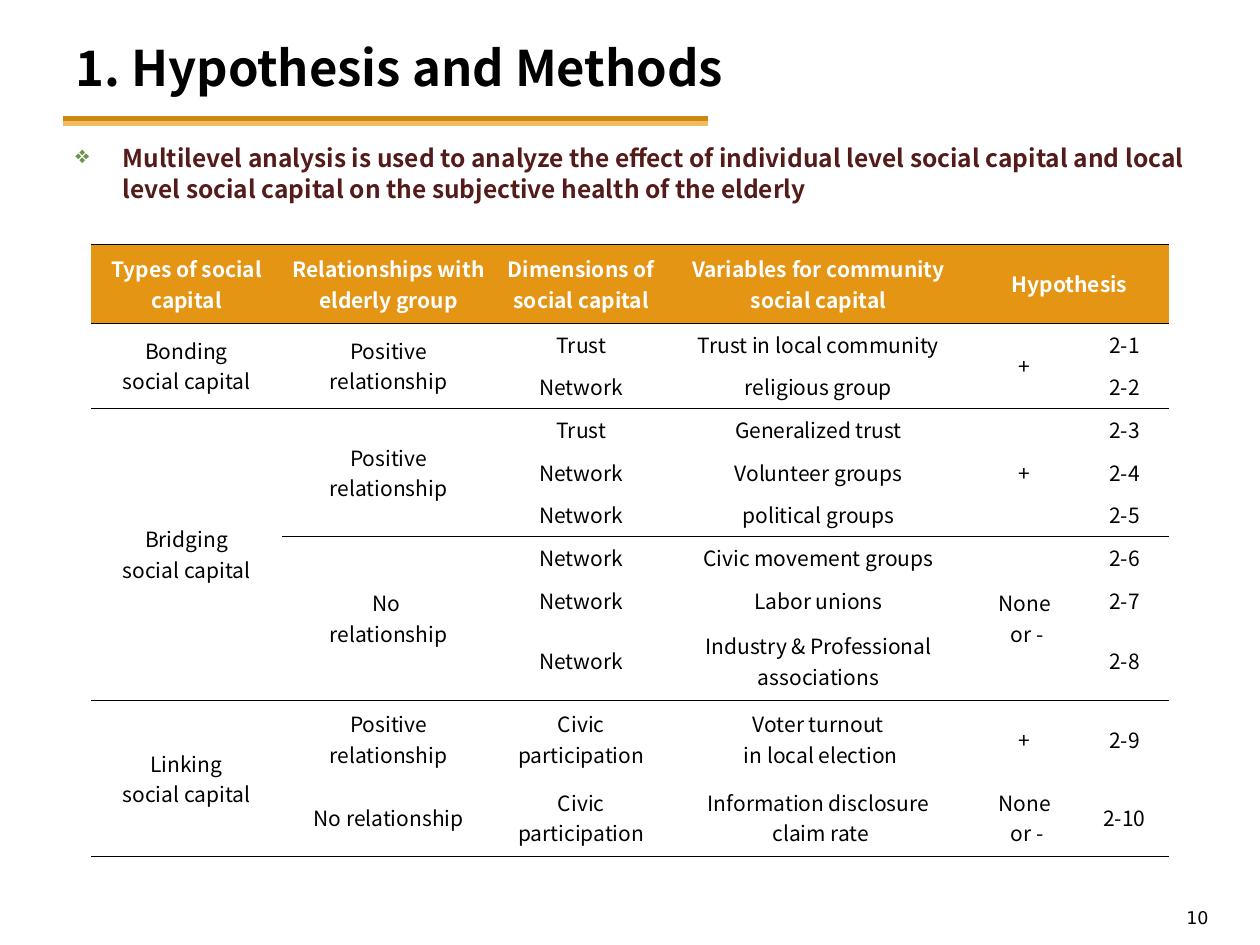
from copy import deepcopy

from lxml import etree
from pptx import Presentation
from pptx.dml.color import RGBColor
from pptx.enum.shapes import MSO_CONNECTOR
from pptx.enum.text import MSO_ANCHOR, PP_ALIGN
from pptx.oxml.ns import qn
from pptx.util import Pt

LEFT, CENTER, RIGHT = PP_ALIGN.LEFT, PP_ALIGN.CENTER, PP_ALIGN.RIGHT
TOP, MIDDLE = MSO_ANCHOR.TOP, MSO_ANCHOR.MIDDLE
STRAIGHT = MSO_CONNECTOR.STRAIGHT

MAIN_FONT, NUMBER_FONT = "Noto Sans CJK KR", "DejaVu Sans"
COLORS = {
    "black": "000000", "white": "FFFFFF", "header": "E49514", "body": "541B1B",
    "bullet": "6E9349", "dark rule": "CF8711", "light rule": "F2BB60",
}

TITLE = "1. Hypothesis and Methods"
BODY = ("Multilevel analysis is used to analyze the effect of individual level social "
        "capital and local level social capital on the subjective health of the elderly")
PAGE_NUMBER = "10"
TITLE_RULES = [(67.7, "dark rule"), (70.6, "light rule")]

# None marks a cell covered by the merged cell above or to the left of it.
ROWS = [
    ["Types of social capital", "Relationships with elderly group",
     "Dimensions of social capital", "Variables for community social capital",
     "Hypothesis", None],
    ["Bonding\nsocial capital", "Positive relationship", "Trust",
     "Trust in local community", "+", "2-1"],
    [None, None, "Network", "religious group", None, "2-2"],
    ["Bridging\nsocial capital", "Positive relationship", "Trust",
     "Generalized trust", "+", "2-3"],
    [None, None, "Network", "Volunteer groups", None, "2-4"],
    [None, None, "Network", "political groups", None, "2-5"],
    [None, "No \nrelationship", "Network", "Civic movement groups", "None\n or -", "2-6"],
    [None, None, "Network", "Labor unions", None, "2-7"],
    [None, None, "Network", "Industry & Professional associations", None, "2-8"],
    ["Linking\nsocial capital", "Positive relationship", "Civic participation",
     "Voter turnout\n in local election", "+", "2-9"],
    [None, "No relationship", "Civic participation",
     "Information disclosure\n claim rate", "None\n or -", "2-10"],
]
TABLE_LEFT, TABLE_TOP = 52, 139.7
COLUMN_WIDTHS = [109.2, 121.8, 98.4, 172.8, 62.8, 51.2]
TALL_ROW, SHORT_ROW = 44.8, 24.4
TALL_ROWS = {0, 8, 9, 10}
RULED_EDGES = {0, 1, 3, 6, 9, 11}  # row edges drawn in black


def rgb(name):
    return RGBColor.from_string(COLORS[name])


def write_text(frame, text, *, size, color="black", font=MAIN_FONT, bold=False,
               align=LEFT, anchor=TOP, after=0, before=0, spacing=1.0):
    frame.word_wrap = True
    frame.vertical_anchor = anchor
    paragraph = frame.paragraphs[0]
    paragraph.text = text
    paragraph.alignment = align
    paragraph.line_spacing = spacing
    paragraph.space_before, paragraph.space_after = Pt(before), Pt(after)
    for run in paragraph.runs:
        run.font.name, run.font.size, run.font.bold = font, Pt(size), bold
        run.font.color.rgb = rgb(color)
    for line_break in paragraph._p.findall(qn("a:br")):
        line_break.append(deepcopy(paragraph.runs[0]._r.rPr))
    return paragraph


def add_text_box(slide, left, top, width, height, text, **text_format):
    box = slide.shapes.add_textbox(Pt(left), Pt(top), Pt(width), Pt(height))
    return write_text(box.text_frame, text, **text_format)


def add_bullet(paragraph, character, color, indent):
    properties = paragraph._p.get_or_add_pPr()
    properties.set("marL", str(Pt(indent)))
    properties.set("indent", str(-Pt(indent)))
    bullet_color = etree.SubElement(properties, qn("a:buClr"))
    etree.SubElement(bullet_color, qn("a:srgbClr"), val=COLORS[color])
    etree.SubElement(properties, qn("a:buChar"), char=character)


def add_rule(slide, left, right, y, color, width):
    rule = slide.shapes.add_connector(STRAIGHT, Pt(left), Pt(y), Pt(right), Pt(y))
    rule.line.color.rgb = rgb(color)
    rule.line.width = Pt(width)
    etree.SubElement(rule._element.spPr, qn("a:effectLst"))


def set_borders(cell, top_ruled, bottom_ruled):
    """Draw black or white edges above and below; leave the sides open."""
    properties = cell._tc.get_or_add_tcPr()
    for side in ("a:lnL", "a:lnR"):
        etree.SubElement(etree.SubElement(properties, qn(side)), qn("a:noFill"))
    for side, ruled in (("a:lnT", top_ruled), ("a:lnB", bottom_ruled)):
        color, width = ("black", 0.28) if ruled else ("white", 0.5)
        line = etree.SubElement(properties, qn(side), w=str(Pt(width)))
        fill = etree.SubElement(line, qn("a:solidFill"))
        etree.SubElement(fill, qn("a:srgbClr"), val=COLORS[color])


def merge_cells(table):
    table.cell(0, 4).merge(table.cell(0, 5))
    for column in range(len(COLUMN_WIDTHS) - 1):
        start = 1
        for row in range(2, len(ROWS) + 1):
            if row == len(ROWS) or ROWS[row][column] is not None:
                if row - start > 1:
                    table.cell(start, column).merge(table.cell(row - 1, column))
                start = row


def add_hypothesis_table(slide):
    heights = [TALL_ROW if row in TALL_ROWS else SHORT_ROW for row in range(len(ROWS))]
    table = slide.shapes.add_table(
        len(ROWS), len(COLUMN_WIDTHS), Pt(TABLE_LEFT), Pt(TABLE_TOP),
        Pt(sum(COLUMN_WIDTHS)), Pt(sum(heights))).table
    table.first_row = table.horz_banding = False
    for column, width in zip(table.columns, COLUMN_WIDTHS):
        column.width = Pt(width)
    for row, height in zip(table.rows, heights):
        row.height = Pt(height)
    merge_cells(table)

    for row, texts in enumerate(ROWS):
        header = row == 0
        for column, text in enumerate(texts):
            cell = table.cell(row, column)
            edges = RULED_EDGES - {6} if column == 0 else RULED_EDGES
            span = cell.span_height if cell.is_merge_origin else 1
            set_borders(cell, row in edges, row + span in edges)
            if header:
                cell.fill.solid()
                cell.fill.fore_color.rgb = rgb("header")
            else:
                cell.fill.background()
            cell.margin_left = cell.margin_right = Pt(5.1)
            cell.margin_top = cell.margin_bottom = Pt(1.4)
            cell.vertical_anchor = MIDDLE
            if text is not None:
                write_text(cell.text_frame, text, size=12, bold=header, align=CENTER,
                           anchor=MIDDLE, after=8, color="white" if header else "black")


def main():
    presentation = Presentation()
    presentation.slide_width, presentation.slide_height = Pt(720), Pt(540)
    slide = presentation.slides.add_slide(presentation.slide_layouts[5])

    for y, color in TITLE_RULES:
        add_rule(slide, 36, 404.6, y, color, 3)

    title = slide.shapes.title
    title.left, title.top, title.width, title.height = Pt(36), Pt(16), Pt(684), Pt(44.6)
    write_text(title.text_frame, TITLE, size=28, bold=True, anchor=MIDDLE)

    body = add_text_box(slide, 36, 77, 648, 52, BODY, size=14, color="body",
                        bold=True, before=1, spacing=1.07)
    add_bullet(body, "❖", "bullet", 27)
    add_hypothesis_table(slide)
    add_text_box(slide, 530, 514.8, 167.7, 19.4, PAGE_NUMBER, size=10,
                 font=NUMBER_FONT, align=RIGHT)
    presentation.save("out.pptx")


if __name__ == "__main__":
    main()
